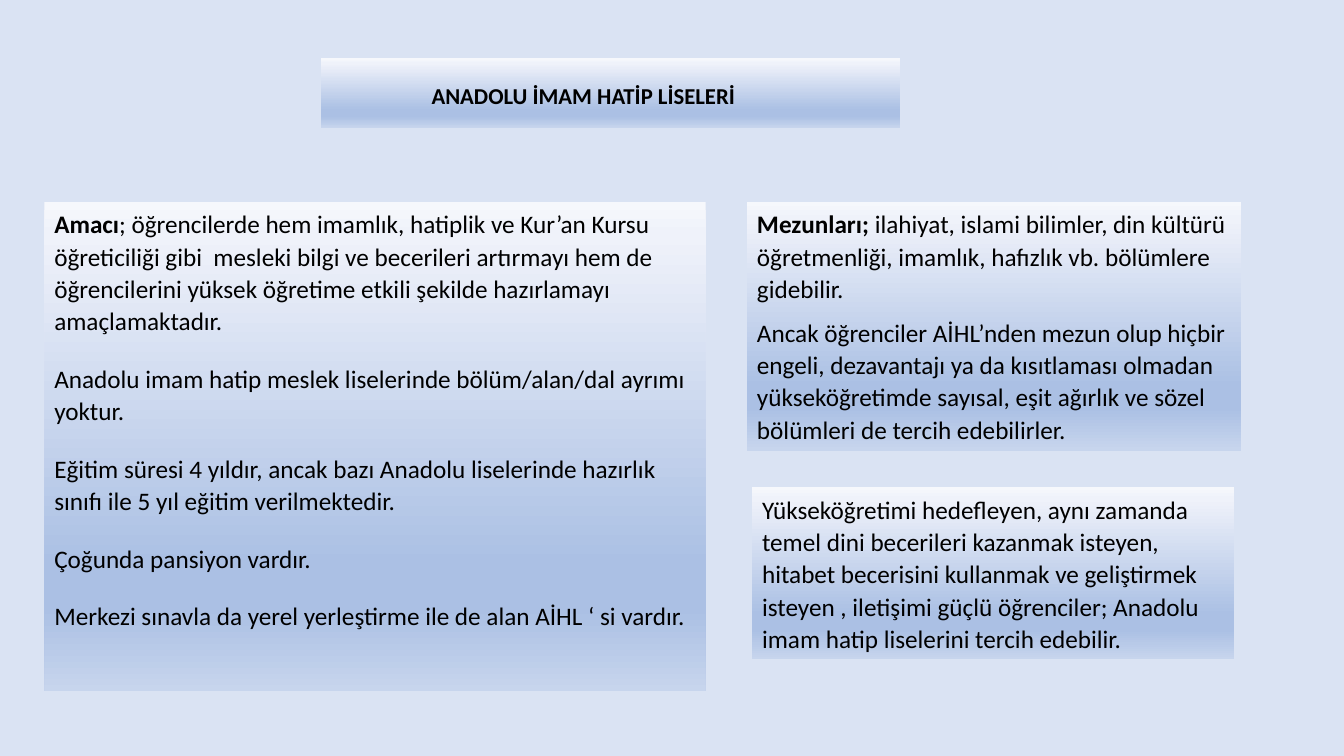
from lxml.etree import SubElement
from pptx import Presentation
from pptx.dml.color import RGBColor
from pptx.enum.text import MSO_ANCHOR, MSO_AUTO_SIZE
from pptx.oxml.ns import qn
from pptx.util import Inches, Pt

GRADIENT = [(0, "F6F8FC"), (7, "EFF2FA"), (74, "ABC0E4"), (83, "ABC0E4"), (100, "C7D5ED")]

PURPOSE = [
    ("Amacı", "; öğrencilerde hem imamlık, hatiplik ve Kur’an Kursu öğreticiliği gibi  mesleki "
              "bilgi ve becerileri artırmayı hem de öğrencilerini yüksek öğretime etkili şekilde "
              "hazırlamayı amaçlamaktadır."),
    ("", "Anadolu imam hatip meslek liselerinde bölüm/alan/dal ayrımı yoktur."),
    ("", "Eğitim süresi 4 yıldır, ancak bazı Anadolu liselerinde hazırlık sınıfı ile 5 yıl "
         "eğitim verilmektedir."),
    ("", "Çoğunda pansiyon vardır."),
    ("", "Merkezi sınavla da yerel yerleştirme ile de alan AİHL ‘ si vardır."),
]
GRADUATES = [
    ("Mezunları; ", "ilahiyat, islami bilimler, din kültürü öğretmenliği, imamlık, hafızlık vb. "
                    "bölümlere gidebilir."),
    ("", "Ancak öğrenciler AİHL’nden mezun olup hiçbir engeli, dezavantajı ya da kısıtlaması "
         "olmadan yükseköğretimde sayısal, eşit ağırlık ve sözel bölümleri de tercih edebilirler."),
]
CANDIDATES = [
    ("", "Yükseköğretimi hedefleyen, aynı zamanda temel dini becerileri kazanmak isteyen, hitabet "
         "becerisini kullanmak ve geliştirmek isteyen , iletişimi güçlü öğrenciler; Anadolu imam "
         "hatip liselerini tercih edebilir."),
]


def color(value):
    return RGBColor.from_string(value)


def fill_gradient(panel):
    panel.fill.gradient()
    panel.fill.gradient_angle = 270
    stops = panel._element.spPr.find(f".//{qn('a:gsLst')}")
    for stop in list(stops):
        stops.remove(stop)
    for percent, shade in GRADIENT:
        stop = SubElement(stops, qn("a:gs"), pos=str(percent * 1000))
        SubElement(stop, qn("a:srgbClr"), val=shade)


def add_panel(slide, left, top, width, height):
    panel = slide.shapes.add_textbox(Inches(left), Inches(top), Inches(width), Inches(height))
    fill_gradient(panel)
    panel.text_frame.word_wrap = True
    return panel.text_frame


def style_paragraph(paragraph, size, line_spacing):
    paragraph.font.name = "Calibri"
    paragraph.font.size = Pt(size)
    paragraph.font.color.rgb = color("000000")
    paragraph.line_spacing = line_spacing


def add_title(slide, text):
    frame = add_panel(slide, 3.18, 0.58, 5.75, 0.69)
    frame.vertical_anchor = MSO_ANCHOR.MIDDLE
    frame.margin_left = Inches(1.1)
    frame.margin_top = Inches(0.12)
    heading = frame.paragraphs[0]
    heading.text = text
    style_paragraph(heading, 16.2, 0.9)
    heading.font.bold = True


def write_body(frame, entries, space_before=0):
    for index, (lead, body) in enumerate(entries):
        paragraph = frame.add_paragraph() if index else frame.paragraphs[0]
        style_paragraph(paragraph, 18, 1.07)
        paragraph.space_before = Pt(space_before)
        paragraph.space_after = Pt(8)
        if lead:
            lead_run = paragraph.add_run()
            lead_run.text = lead
            lead_run.font.bold = True
        paragraph.add_run().text = body


def main():
    presentation = Presentation()
    presentation.slide_width = Inches(13.33)
    presentation.slide_height = Inches(7.5)
    slide = presentation.slides.add_slide(presentation.slide_layouts[6])
    slide.background.fill.solid()
    slide.background.fill.fore_color.rgb = color("DAE3F3")

    add_title(slide, "ANADOLU İMAM HATİP LİSELERİ")
    write_body(add_panel(slide, 0.44, 2, 6.56, 4.86), PURPOSE, space_before=10)
    for entries, bounds in (
        (GRADUATES, (7.41, 2, 4.9, 2.47)),
        (CANDIDATES, (7.46, 4.83, 4.78, 1.71)),
    ):
        frame = add_panel(slide, *bounds)
        frame.auto_size = MSO_AUTO_SIZE.SHAPE_TO_FIT_TEXT
        write_body(frame, entries)

    presentation.save("out.pptx")


if __name__ == "__main__":
    main()
